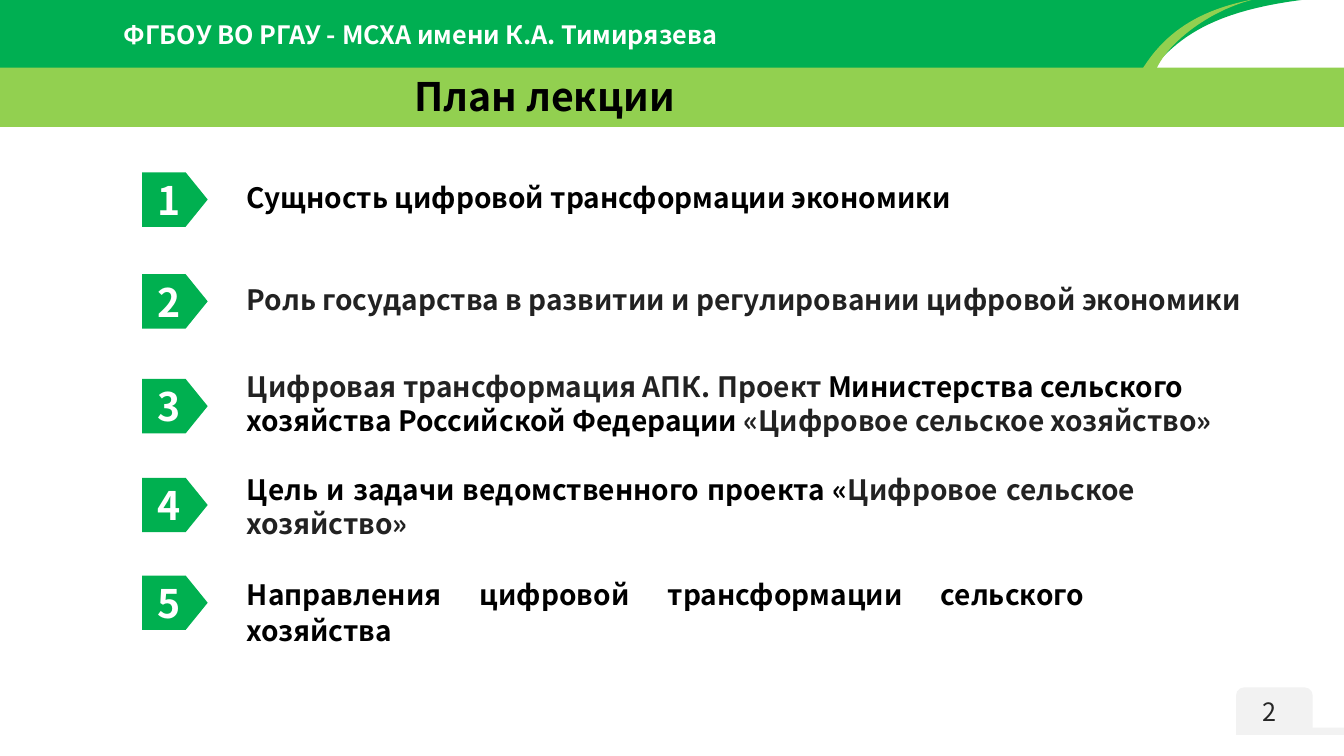
from pptx import Presentation
from pptx.dml.color import RGBColor
from pptx.enum.shapes import MSO_SHAPE
from pptx.enum.text import MSO_ANCHOR, PP_ALIGN
from pptx.util import Inches, Pt

FONT = "Noto Sans CJK SC"
GREEN = RGBColor(0x00, 0xAF, 0x52)
BADGE_GREEN = RGBColor(0x00, 0xB0, 0x50)
LIME = RGBColor(0x92, 0xD0, 0x50)
PALE = RGBColor(0xF2, 0xF2, 0xF2)
WHITE = RGBColor(0xFF, 0xFF, 0xFF)
BLACK = RGBColor(0x00, 0x00, 0x00)
DARK = RGBColor(0x22, 0x22, 0x22)
GREY = RGBColor(0x26, 0x26, 0x26)

WIDTH, HEIGHT = 13.33, 7.5
CURVE_STEPS = 24

PLAN = [
    (1.71, 1.74, 10.29, [("Сущность цифровой трансформации экономики", BLACK)]),
    (2.72, 2.75, 10.7,
     [("Роль государства в развитии и регулировании цифровой экономики", DARK)]),
    (3.76, 3.62, 10.39,
     [("Цифровая трансформация АПК.\u00a0Проект ", DARK),
      ("Министерства сельского хозяйства Российской Федерации", BLACK),
      (" «Цифровое сельское хозяйство»", DARK)]),
    (4.74, 4.64, 9.01,
     [("Цель и задачи ведомственного проекта «", BLACK),
      ("Цифровое сельское хозяйство»", DARK)]),
    (5.71, 5.66, 8.5,
     [("Направления цифровой трансформации сельского хозяйства", BLACK)]),
]
JUSTIFIED = (4, 5)


def paint(shape, color):
    shape.shadow.inherit = False
    shape.fill.solid()
    shape.fill.fore_color.rgb = color
    shape.line.fill.background()


def add_block(slide, kind, box, color):
    shape = slide.shapes.add_shape(kind, *map(Inches, box))
    paint(shape, color)
    return shape


def write(paragraph, runs, size, bold=True, alignment=PP_ALIGN.LEFT):
    paragraph.alignment = alignment
    for text, color in runs:
        run = paragraph.add_run()
        run.text = text
        run.font.name = FONT
        run.font.size = Pt(size)
        run.font.bold = bold
        run.font.color.rgb = color


def add_text(slide, box, runs, size, wrap=True, **style):
    text_frame = slide.shapes.add_textbox(*map(Inches, box)).text_frame
    text_frame.word_wrap = wrap
    paragraph = text_frame.paragraphs[0]
    write(paragraph, runs, size, **style)
    return paragraph


def curve(start, first, second, end):
    points = []
    for step in range(1, CURVE_STEPS + 1):
        t = step / CURVE_STEPS
        weights = ((1 - t) ** 3, 3 * t * (1 - t) ** 2, 3 * t * t * (1 - t), t ** 3)
        points.append(tuple(
            sum(weight * value for weight, value in zip(weights, values))
            for values in zip(start, first, second, end)))
    return points


def add_outline(slide, origin, points, color):
    left, top = origin
    corners = [(Inches(left + x), Inches(top + y)) for x, y in points]
    builder = slide.shapes.build_freeform(*corners[0], scale=1.0)
    builder.add_line_segments(corners[1:], close=True)
    paint(builder.convert_to_shape(), color)


def add_header(slide, box):
    left, top, width, height = box
    band_tip = (width - 0.34, -0.01)
    band = [(0, 0), band_tip]
    band += curve(band_tip, (12.02, 0.1), (11.67, 0.38), (11.4, 0.72))
    band.append((0, 0.72))
    add_outline(slide, (left, top), band, GREEN)

    swoosh_foot, swoosh_tip = (11.31, 0.72), (12.45, -0.01)
    swoosh = [swoosh_foot]
    swoosh += curve(swoosh_foot, (11.58, 0.26), (11.98, 0.08), swoosh_tip)
    swoosh += curve(swoosh_tip, (11.96, 0.11), (11.55, 0.46), (11.46, 0.71))
    add_outline(slide, (left, top), swoosh, LIME)

    add_text(slide, (left + 0.19, top + 0.14, 7.96, 0.4),
             [("ФГБОУ ВО РГАУ - МСХА имени К.А. Тимирязева", WHITE)],
             18, alignment=PP_ALIGN.CENTER)
    title_top = top + 0.67
    add_block(slide, MSO_SHAPE.RECTANGLE,
              (left, title_top, width, height - 0.67), LIME)
    add_text(slide, (left + 4.01, title_top, 2.9, 0.57),
             [("План лекции", BLACK)], 28, wrap=False)


def add_plan(slide, left):
    for number, (badge_top, text_top, width, runs) in enumerate(PLAN, 1):
        badge = add_block(slide, MSO_SHAPE.PENTAGON,
                          (left, badge_top, 0.65, 0.54), BADGE_GREEN)
        badge.adjustments[0] = 0.405
        badge.text_frame.vertical_anchor = MSO_ANCHOR.MIDDLE
        write(badge.text_frame.paragraphs[0], [(str(number), WHITE)], 28,
              alignment=PP_ALIGN.CENTER)

        alignment = PP_ALIGN.JUSTIFY if number in JUSTIFIED else PP_ALIGN.LEFT
        height = 0.44 if number < 3 else 0.77
        paragraph = add_text(slide, (left + 0.94, text_top, width, height),
                             runs, 20, alignment=alignment)
        if number == len(PLAN):
            paragraph.line_spacing = 1.07
            paragraph.space_after = Pt(8)


def add_page_number(slide, box):
    left, top, width, height = box
    add_block(slide, MSO_SHAPE.ROUNDED_RECTANGLE, (left, top, 0.76, height), PALE)
    add_block(slide, MSO_SHAPE.RECTANGLE,
              (left, top + height - 0.07, width, 0.07), PALE)
    add_text(slide, (left, top + 0.04, 0.67, 0.4), [("2", GREY)],
             18, bold=False, alignment=PP_ALIGN.CENTER)


def main():
    presentation = Presentation()
    presentation.slide_width = Inches(WIDTH)
    presentation.slide_height = Inches(HEIGHT)
    slide = presentation.slides.add_slide(presentation.slide_layouts[6])
    add_page_number(slide, (12.26, 6.82, WIDTH - 12.26, 0.47))
    add_header(slide, (0, 0, WIDTH, 1.26))
    add_plan(slide, 1.41)
    presentation.save("out.pptx")


if __name__ == "__main__":
    main()
